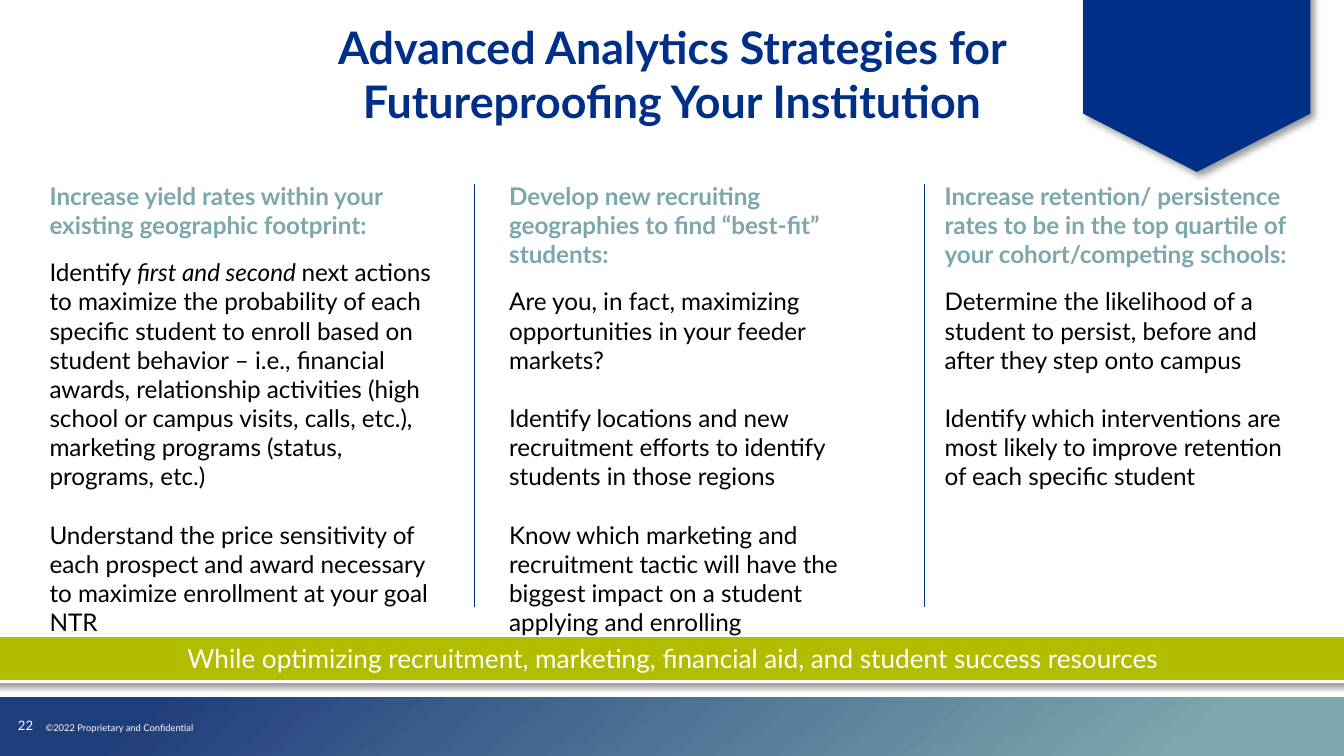
from lxml.etree import SubElement
from pptx import Presentation
from pptx.dml.color import RGBColor
from pptx.enum.shapes import MSO_CONNECTOR, MSO_SHAPE
from pptx.enum.text import MSO_ANCHOR, MSO_AUTO_SIZE, PP_ALIGN
from pptx.oxml.ns import qn
from pptx.util import Inches, Pt

NAVY = RGBColor(0x00, 0x2F, 0x87)
RULE = RGBColor(0x00, 0x2E, 0x84)
DEEP = RGBColor(0x21, 0x3E, 0x7C)
MIST = RGBColor(0x7E, 0xA6, 0xAD)
TEAL = RGBColor(0x7C, 0xA7, 0xAD)
LIME = RGBColor(0xB3, 0xBD, 0x00)
WHITE = RGBColor(0xFF, 0xFF, 0xFF)
BLACK = RGBColor(0x00, 0x00, 0x00)
FONT = "Lato"

COLUMNS = [
    (0.27, 3.15, "Increase yield rates within your existing geographic footprint:", [
        [("Identify ", False), ("first and second ", True),
         ("next actions to maximize the probability of each specific student to "
          "enroll based on student behavior – i.e., financial awards, relationship "
          "activities (high school or campus visits, calls, etc.), marketing "
          "programs (status, programs, etc.)", False)],
        [("Understand the price sensitivity of each prospect and award necessary "
          "to maximize enrollment at your goal NTR", False)],
    ]),
    (3.69, 3.02, "Develop new recruiting geographies to find “best-fit” students:", [
        [("Are you, in fact, maximizing opportunities in your feeder markets?", False)],
        [("Identify locations and new recruitment efforts to identify students in "
          "those regions", False)],
        [("Know which marketing and recruitment tactic will have the biggest impact "
          "on a student applying and enrolling", False)],
    ]),
    (6.93, 2.8, "Increase retention/ persistence rates to be in the top quartile of "
                "your cohort/competing schools:", [
        [("Determine the likelihood of a student to persist, before and after they "
          "step onto campus", False)],
        [("Identify which interventions are most likely to improve retention of "
          "each specific student", False)],
    ]),
]


def add_run(para, text, size, color, bold=False, italic=False):
    """Add one formatted run to a paragraph."""
    run = para.add_run()
    run.text = text
    font = run.font
    font.name, font.size, font.bold, font.italic = FONT, Pt(size), bold, italic
    font.color.rgb = color


def add_frame(slide, box, anchor=MSO_ANCHOR.TOP):
    """Add a wrapping text box and return its text frame."""
    frame = slide.shapes.add_textbox(*map(Inches, box)).text_frame
    frame.word_wrap = True
    frame.vertical_anchor = anchor
    return frame


def add_block(slide, kind, box):
    """Add a preset shape without line or shadow."""
    shape = slide.shapes.add_shape(kind, *map(Inches, box))
    shape.shadow.inherit = False
    shape.line.fill.background()
    return shape


def add_shadow(shape, alpha, blur, dist, angle):
    """Give a shape a black outer shadow."""
    effects = shape.element.spPr.find(qn("a:effectLst"))
    outer = SubElement(effects, qn("a:outerShdw"), blurRad=str(Pt(blur)),
                       dist=str(Pt(dist)), dir=str(angle * 60000), rotWithShape="0")
    color = SubElement(outer, qn("a:srgbClr"), val=str(BLACK))
    SubElement(color, qn("a:alpha"), val=str(alpha * 1000))


def add_footer(slide, box):
    """Draw the gradient bar with page number and copyright line."""
    left, top, _, _ = box
    fill = add_block(slide, MSO_SHAPE.RECTANGLE, box).fill
    fill.gradient()
    fill.gradient_angle = 310
    for stop, color, place in zip(fill.gradient_stops, (DEEP, MIST), (0.11, 0.88)):
        stop.color.rgb = color
        stop.position = place
    note = add_frame(slide, (left + 0.25, top + 0.13, 1.98, 0.19), MSO_ANCHOR.MIDDLE)
    add_run(note.paragraphs[0], "©2022 Proprietary and Confidential", 5, WHITE)
    page = add_frame(slide, (left - 0.02, top + 0.13, 0.44, 0.16), MSO_ANCHOR.MIDDLE)
    page.margin_left = page.margin_right = Inches(0.07)
    page.margin_top = page.margin_bottom = Inches(0.04)
    page.paragraphs[0].alignment = PP_ALIGN.CENTER
    add_run(page.paragraphs[0], "22", 7, WHITE)


def add_badge(slide, box):
    """Draw the navy pennant that hangs from the top edge."""
    badge = add_block(slide, MSO_SHAPE.PENTAGON, box)
    badge.rotation = 90
    badge.adjustments[0] = 0.26
    badge.fill.solid()
    badge.fill.fore_color.rgb = NAVY
    add_shadow(badge, 40, 4, 3, 45)


def add_title(slide, box):
    """Place and format the title placeholder."""
    title = slide.shapes.title
    title.left, title.top, title.width, title.height = map(Inches, box)
    frame = title.text_frame
    frame.auto_size = MSO_AUTO_SIZE.NONE
    frame.vertical_anchor = MSO_ANCHOR.TOP
    para = frame.paragraphs[0]
    para.alignment = PP_ALIGN.CENTER
    add_run(para, "Advanced Analytics Strategies for Futureproofing Your Institution",
            24, NAVY, bold=True)


def add_band(slide, box):
    """Draw the lime band with the closing statement."""
    band = add_block(slide, MSO_SHAPE.RECTANGLE, box)
    band.fill.solid()
    band.fill.fore_color.rgb = LIME
    band.line.color.rgb = WHITE
    band.line.width = Pt(1.5)
    add_shadow(band, 38, 3.1, 1.6, 90)
    para = band.text_frame.paragraphs[0]
    para.alignment = PP_ALIGN.CENTER
    add_run(para, "While optimizing recruitment, marketing, financial aid, and "
                  "student success resources", 14, WHITE)


def add_column(slide, box, head, items):
    """Write one strategy column: a heading and its paragraphs."""
    frame = add_frame(slide, box)
    add_run(frame.paragraphs[0], head, 13, TEAL, bold=True)
    for index, item in enumerate(items):
        para = frame.add_paragraph()
        para.space_before = Pt(15.6 if index else 9.6)
        for text, italic in item:
            add_run(para, text, 13, BLACK, italic=italic)


def add_rule(slide, left, top, height):
    """Draw a thin vertical divider."""
    rule = slide.shapes.add_connector(MSO_CONNECTOR.STRAIGHT, Inches(left), Inches(top),
                                      Inches(left), Inches(top + height))
    rule.line.color.rgb = RULE
    rule.line.width = Pt(0.75)
    SubElement(rule.element.spPr, qn("a:effectLst"))


def main():
    """Build the slide and save it."""
    deck = Presentation()
    deck.slide_width = Inches(10)
    deck.slide_height = Inches(10) * 9 // 16
    slide = deck.slides.add_slide(deck.slide_layouts[5])
    add_footer(slide, (-0.01, 5.19, 10.01, 0.44))
    add_badge(slide, (8.07, -0.4, 1.67, 1.69))
    add_title(slide, (1.6, 0.1, 6.8, 0.9))
    add_band(slide, (-0.07, 4.73, 10.16, 0.34))
    for left, width, head, items in COLUMNS:
        add_column(slide, (left, 1.3, width, 3.4), head, items)
    for left in (3.53, 6.88):
        add_rule(slide, left, 1.37, 3.15)
    deck.save("out.pptx")


if __name__ == "__main__":
    main()
